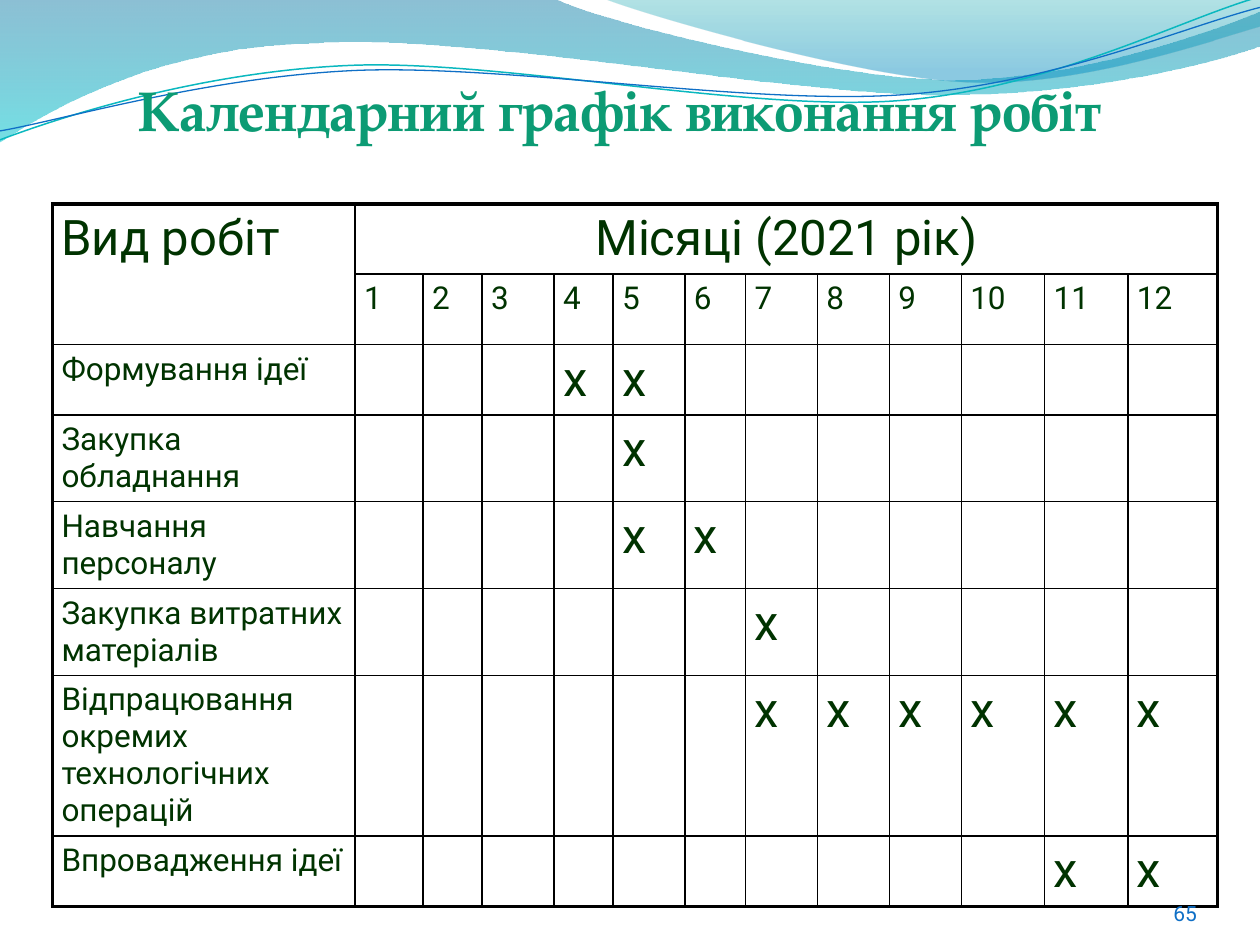
import math

import pptx
import pptx.dml.color
import pptx.enum.text
import pptx.oxml
import pptx.oxml.ns
import pptx.util
from lxml import etree

Cm = pptx.util.Cm
Pt = pptx.util.Pt
ALIGN = pptx.enum.text.PP_ALIGN
ANCHOR = pptx.enum.text.MSO_ANCHOR
qn = pptx.oxml.ns.qn

COLORS = {
    "title": "0C9B74",
    "text": "003300",
    "border": "000000",
    "number": "0F6FC6",
    "teal_line": "0AB8BF",
    "blue_line": "0F6FC6",
    "band_top": "0074A1",
    "band_bottom": "00C6CF",
    "crest_top": "00A1A9",
    "crest_bottom": "008BBF",
}
BODY_FONT = "Roboto"
TITLE_FONT = "TeX Gyre Pagella"
WAVE_TILT = 357.3

BAND = [(0, 0), [(11.18, -0.03)],
        [(12.09, 0.43), (16.87, 1.6), (19.25, 1.6)],
        [(21.67, 1.6), (24.33, 0.66), (25.4, 0.23)],
        [(25.43, 0.91)],
        [(24.97, 1.12), (22.1, 1.93), (18.95, 1.91)],
        [(15.8, 1.91), (9.7, 0.71), (6.53, 0.86)],
        [(3.25, 0.91), (1.17, 2.11), (-0.03, 2.87)]]
CREST = [(12.17, -0.03),
         [(12.93, 0.28), (17.32, 1.57), (19.53, 1.65)],
         [(21.74, 1.75), (24.41, 0.81), (25.4, 0.53)],
         [(25.4, 0)]]
TEAL_WAVE = [(0, 2.82),
             [(1.22, 2.36), (4.01, 1.45), (7.04, 1.32)],
             [(10.03, 1.19), (15.06, 2.26), (18.11, 2.03)],
             [(21.16, 1.8), (23.83, 0.38), (25.35, -0.05)]]
BLUE_WAVE = [(0, 2.64),
             [(1.19, 2.44), (4.17, 1.55), (7.19, 1.42)],
             [(10.24, 1.3), (15.16, 2.13), (18.21, 1.91)],
             [(21.23, 1.7), (23.9, 0.53), (25.4, 0.15)]]

COL_WIDTHS = [6.1, 1.37, 1.19, 1.45, 1.19, 1.45, 1.22, 1.45, 1.45, 1.45, 1.68, 1.68, 1.8]
ROW_HEIGHTS = [1.4, 1.4, 1.4, 1.72, 1.72, 1.72, 3.2, 1.4]
TASKS = [
    ("Формування ідеї", [4, 5]),
    ("Закупка обладнання", [5]),
    ("Навчання персоналу", [5, 6]),
    ("Закупка витратних матеріалів", [7]),
    ("Відпрацювання окремих технологічних операцій", range(7, 13)),
    ("Впровадження ідеї", [11, 12]),
]


def rgb(name):
    return pptx.dml.color.RGBColor.from_string(COLORS[name])


def add_run(p, text, size, color, font=BODY_FONT, bold=False):
    r = p.add_run()
    r.text = text
    r.font.size = Pt(size)
    r.font.name = font
    r.font.bold = bold
    r.font.color.rgb = rgb(color)


def set_margins(obj, left, top, right, bottom):
    obj.margin_left, obj.margin_top = Cm(left), Cm(top)
    obj.margin_right, obj.margin_bottom = Cm(right), Cm(bottom)


def turn(outline, center, degrees):
    cos, sin = math.cos(math.radians(degrees)), math.sin(math.radians(degrees))
    cx, cy = center

    def move(pt):
        x, y = pt[0] - cx, pt[1] - cy
        return cx + x * cos - y * sin, cy + x * sin + y * cos

    return [move(outline[0])] + [[move(pt) for pt in seg] for seg in outline[1:]]


def add_outline(s, left, top, outline, close):
    def place(pt):
        return Cm(left + pt[0]), Cm(top + pt[1])

    fb = s.shapes.build_freeform(*place(outline[0]))
    fb.add_line_segments([place(pt) for seg in outline[1:] for pt in seg], close=close)
    sp = fb.convert_to_shape()
    sp.shadow.inherit = False
    lines = iter(list(sp._element.iter(qn("a:lnTo"))))
    for seg in outline[1:]:
        parts = [next(lines) for _ in seg]
        if len(seg) == 3:
            curve = etree.Element(qn("a:cubicBezTo"))
            parts[0].addprevious(curve)
            for part in parts:
                curve.append(part[0])
                part.getparent().remove(part)
    return sp


def add_waves(s, left, top):
    bands = [
        (BAND, [(0, "band_top", 45), (1, "band_bottom", 55)]),
        (CREST, [(0, "crest_top", 30), (0.8, "crest_bottom", 45)]),
    ]
    for outline, stops in bands:
        sp = add_outline(s, left, top, outline, True)
        sp.line.fill.background()
        sp.fill.gradient()
        sp.fill.gradient_angle = 270
        for stop, (position, color, _) in zip(sp.fill.gradient_stops, stops):
            stop.position = position
            stop.color.rgb = rgb(color)
        for clr, (_, _, opacity) in zip(sp._element.spPr.iter(qn("a:srgbClr")), stops):
            etree.SubElement(clr, qn("a:alpha"), val=str(opacity * 1000))
    waves = [
        (TEAL_WAVE, (12.68, 1.46), "teal_line", 0.85),
        (BLUE_WAVE, (12.7, 1.5), "blue_line", 0.75),
    ]
    for outline, center, color, width in waves:
        sp = add_outline(s, left, top, turn(outline, center, -WAVE_TILT), False)
        sp.rotation = WAVE_TILT
        sp.fill.background()
        sp.line.color.rgb = rgb(color)
        sp.line.width = Pt(width)


def add_title(s, left, top, width, height):
    title = s.shapes.title
    s.shapes._spTree.append(title._element)
    title.left, title.top, title.width, title.height = map(Cm, (left, top, width, height))
    tf = title.text_frame
    tf.auto_size = pptx.enum.text.MSO_AUTO_SIZE.NONE
    tf.vertical_anchor = ANCHOR.BOTTOM
    set_margins(tf, 0, 0.13, 0, 0)
    p = tf.paragraphs[0]
    p.alignment = ALIGN.CENTER
    add_run(p, "Календарний графік виконання робіт", 32, "title", TITLE_FONT, True)


def set_borders(cell, outer):
    tcPr = cell._tc.get_or_add_tcPr()
    for side in "LRTB":
        width = Pt(2.25 if side in outer else 1)
        ln = etree.SubElement(tcPr, qn("a:ln" + side), w=str(width))
        fill = etree.SubElement(ln, qn("a:solidFill"))
        etree.SubElement(fill, qn("a:srgbClr"), val=COLORS["border"])


def add_schedule(s, left, top):
    rows, cols = len(ROW_HEIGHTS), len(COL_WIDTHS)
    table = s.shapes.add_table(rows, cols, Cm(left), Cm(top),
                               Cm(sum(COL_WIDTHS)), Cm(sum(ROW_HEIGHTS))).table
    table.first_row = table.horz_banding = False
    for col, width in zip(table.columns, COL_WIDTHS):
        col.width = Cm(width)
    for row, height in zip(table.rows, ROW_HEIGHTS):
        row.height = Cm(height)
    table.cell(0, 0).merge(table.cell(1, 0))
    table.cell(0, 1).merge(table.cell(0, cols - 1))
    for i in range(rows):
        for j in range(cols):
            cell = table.cell(i, j)
            last = j + (cell.span_width if cell.is_merge_origin else 1) == cols
            edges = {"L": j == 0, "R": last, "T": i == 0, "B": i == rows - 1}
            set_borders(cell, [side for side, outer in edges.items() if outer])
            cell.fill.background()
            set_margins(cell, 0.18, 0.13, 0.18, 0.13)

    def write(i, j, text, size):
        p = table.cell(i, j).text_frame.paragraphs[0]
        add_run(p, text, size, "text")
        return p

    write(0, 0, "Вид робіт", 28)
    write(0, 1, "Місяці (2021 рік)", 28).alignment = ALIGN.CENTER
    for month in range(1, cols):
        write(1, month, str(month), 18)
    for i, (task, months) in enumerate(TASKS, 2):
        write(i, 0, task, 18)
        for month in months:
            write(i, month, "х", 28)


def add_number(s, left, top, width, height):
    tf = s.shapes.add_textbox(*map(Cm, (left, top, width, height))).text_frame
    tf.word_wrap = True
    tf.vertical_anchor = ANCHOR.BOTTOM
    set_margins(tf, 0, 0, 0, 0)
    p = tf.paragraphs[0]
    p.alignment = ALIGN.RIGHT
    add_run(p, "65", 12, "number")


def main():
    prs = pptx.Presentation()
    prs.slide_width, prs.slide_height = Cm(25.4), Cm(19.05)
    s = prs.slides.add_slide(prs.slide_layouts[5])
    add_waves(s, 0, 0)
    add_title(s, 1.07, 0.84, 22.86, 2.03)
    add_schedule(s, 1.06, 4.11)
    add_number(s, 22.02, 17.65, 2.11, 1.02)
    prs.save("out.pptx")


if __name__ == "__main__":
    main()
